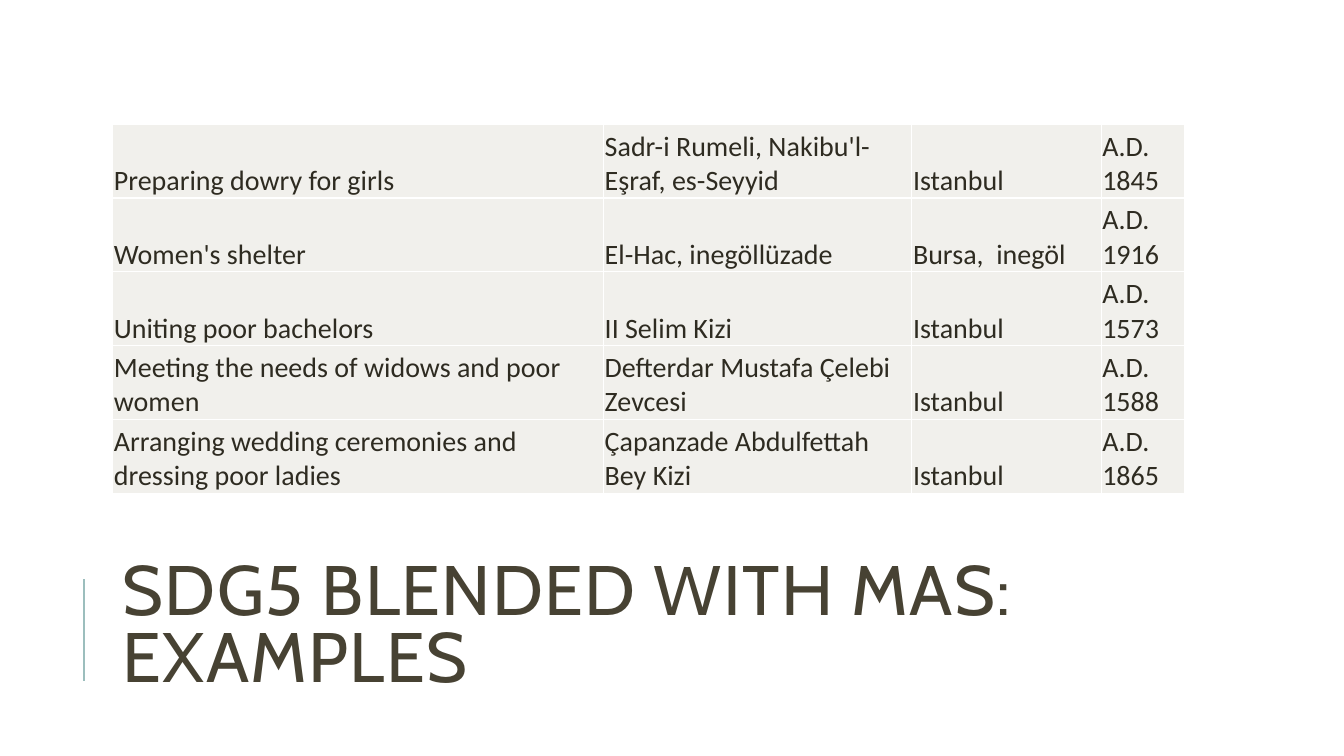
from lxml.etree import SubElement
from pptx import Presentation
from pptx.dml.color import RGBColor
from pptx.enum.shapes import MSO_CONNECTOR
from pptx.enum.text import MSO_ANCHOR, MSO_AUTO_SIZE, PP_ALIGN
from pptx.oxml import parse_xml
from pptx.oxml.ns import nsdecls, qn
from pptx.util import Cm, Pt


def rgb(value):
    return RGBColor.from_string(value)


def add_run(p, text, size, font, color):
    r = p.add_run()
    r.text = text
    for key, value in {"size": Pt(size), "name": font, "bold": False}.items():
        setattr(r.font, key, value)
    r.font.color.rgb = rgb(color)
    return r


prs = Presentation()
prs.slide_width, prs.slide_height = Cm(33.87), Cm(19.05)
s = prs.slides.add_slide(prs.slide_layouts[5])

title = s.shapes.title
title_box = {"left": 2.84, "top": 13.77, "width": 27, "height": 4.17}
for key, value in title_box.items():
    setattr(title, key, Cm(value))
tf = title.text_frame
title_format = {
    "word_wrap": True,
    "auto_size": MSO_AUTO_SIZE.NONE,
    "vertical_anchor": MSO_ANCHOR.MIDDLE,
}
for key, value in title_format.items():
    setattr(tf, key, value)
p = tf.paragraphs[0]
p.alignment, p.line_spacing = PP_ALIGN.LEFT, 0.8
r = add_run(p, "SDG5 BLENDED WITH MAS: EXAMPLES", 50, "Cabin", "474233")
r.font._element.set("spc", "100")

accent = s.shapes.add_connector(
    MSO_CONNECTOR.STRAIGHT, Cm(2.11), Cm(17.15), Cm(2.11), Cm(14.6)
)
accent.line.color.rgb = rgb("9CBEBD")
accent.line.width = Pt(1.5)
SubElement(accent._element.spPr, qn("a:effectLst"))

rows = [
    ("Preparing dowry for girls", "Sadr-i Rumeli, Nakibu'l-Eşraf, es-Seyyid", "Istanbul", "A.D. 1845"),
    ("Women's shelter", "El-Hac, inegöllüzade", "Bursa,  inegöl", "A.D. 1916"),
    ("Uniting poor bachelors", "II Selim Kizi", "Istanbul", "A.D. 1573"),
    ("Meeting the needs of widows and poor women", "Defterdar Mustafa Çelebi Zevcesi", "Istanbul", "A.D. 1588"),
    ("Arranging wedding ceremonies and dressing poor ladies", "Çapanzade Abdulfettah Bey Kizi", "Istanbul", "A.D. 1865"),
]
col_widths = [12.37, 7.77, 4.77, 2.1]
row_height = 1.86
cell_format = {
    "vertical_anchor": MSO_ANCHOR.BOTTOM,
    "margin_left": Cm(0.03),
    "margin_right": Cm(0.03),
    "margin_top": Cm(0.03),
    "margin_bottom": Cm(0),
}

table = s.shapes.add_table(
    len(rows), len(col_widths), Cm(2.84), Cm(3.13),
    Cm(sum(col_widths)), Cm(row_height * len(rows)),
).table
table.first_row = table.horz_banding = False
for column, width in zip(table.columns, col_widths):
    column.width = Cm(width)
for i, texts in enumerate(rows):
    table.rows[i].height = Cm(row_height)
    for j, text in enumerate(texts):
        cell = table.cell(i, j)
        for key, value in cell_format.items():
            setattr(cell, key, value)
        for side in ("lnL", "lnR", "lnT", "lnB"):
            cell._tc.get_or_add_tcPr().append(parse_xml(
                f'<a:{side} {nsdecls("a")} w="{Pt(1)}"><a:solidFill>'
                f'<a:srgbClr val="FFFFFF"/></a:solidFill></a:{side}>'
            ))
        cell.fill.solid()
        cell.fill.fore_color.rgb = rgb("F1F0EC")
        add_run(cell.text_frame.paragraphs[0], text, 20, "Calibri", "2E2B21")

prs.save("out.pptx")
